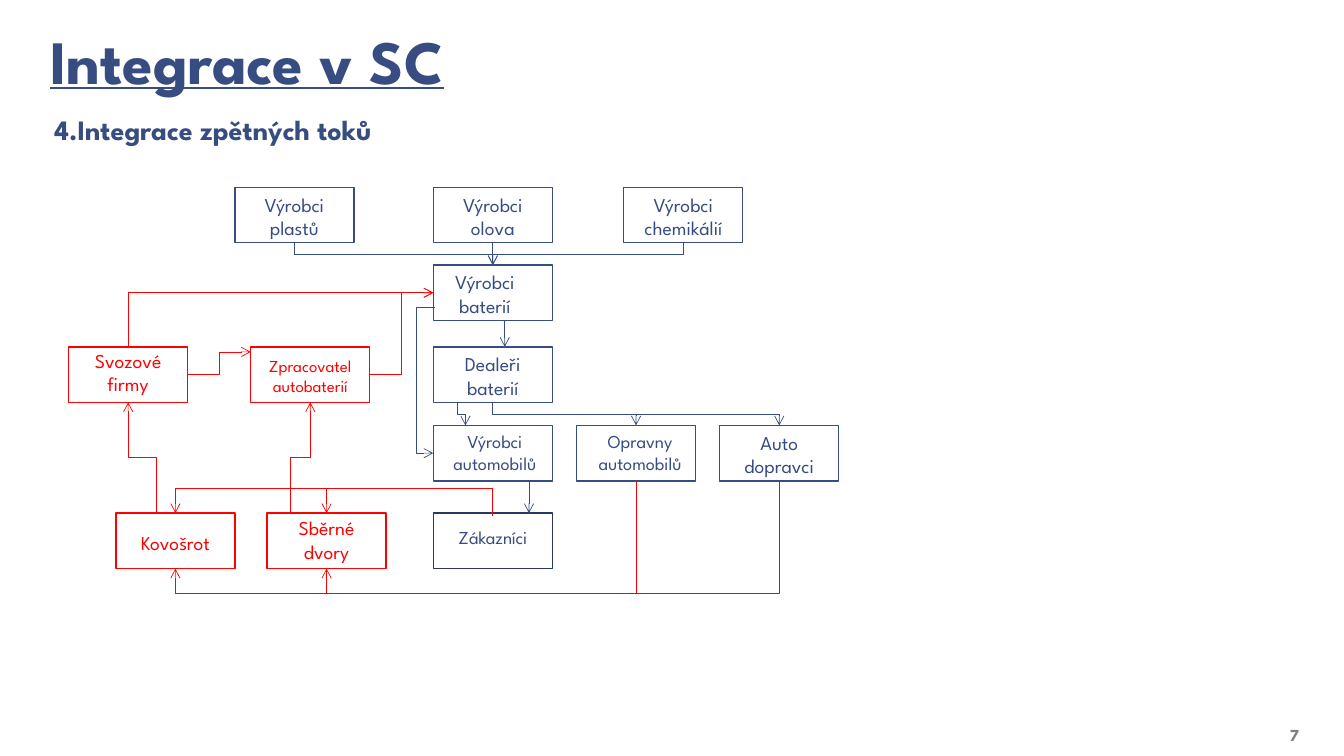
from lxml import etree
from pptx import Presentation
from pptx.dml.color import RGBColor
from pptx.enum.shapes import MSO_CONNECTOR, MSO_SHAPE
from pptx.enum.text import MSO_ANCHOR, MSO_AUTO_SIZE, PP_ALIGN
from pptx.oxml.ns import qn
from pptx.util import Cm, Pt

RECTANGLE = MSO_SHAPE.RECTANGLE
STRAIGHT, ELBOW = MSO_CONNECTOR.STRAIGHT, MSO_CONNECTOR.ELBOW
TOP, BOTTOM = MSO_ANCHOR.TOP, MSO_ANCHOR.BOTTOM
LEFT, CENTER, RIGHT = PP_ALIGN.LEFT, PP_ALIGN.CENTER, PP_ALIGN.RIGHT
NO_FIT = MSO_AUTO_SIZE.NONE

FONT = "League Spartan"
COLORS = {"navy": "374C81", "dark": "293961", "red": "FF0000", "gray": "7F7F7F"}
BOX_WIDTH, BOX_HEIGHT = 3.0, 1.4
ROWS = [0, 1.96, 4.02, 6.0, 8.21]
CORNER = "corner"

# name: text, left, row, size, line colour, text colour, text shift right, text shift down
BOXES = {
    "plastics": ("Výrobci plastů", 4.19, 0, 14, "navy", "navy", 0, 0),
    "lead": ("Výrobci olova", 9.19, 0, 14, "navy", "navy", 0, 0),
    "chemicals": ("Výrobci chemikálií", 13.99, 0, 14, "navy", "navy", 0, 0),
    "batteries": ("Výrobci baterií", 9.19, 1, 14, "navy", "navy", -0.2, 0),
    "dealers": ("Dealeři baterií", 9.19, 2, 14, "navy", "navy", 0, 0),
    "collectors": ("Svozové firmy", 0, 2, 14, "red", "red", 0, -0.08),
    "processor": ("Zpracovatel autobaterií", 4.59, 2, 12, "red", "red", 0, 0.1),
    "cars": ("Výrobci automobilů", 9.19, 3, 13, "navy", "navy", 0.05, 0),
    "repairs": ("Opravny automobilů", 12.8, 3, 13, "navy", "navy", 0.1, 0),
    "carriers": ("Auto dopravci", 16.41, 3, 14, "navy", "navy", 0, 0),
    "customers": ("Zákazníci", 9.19, 4, 13, "dark", "navy", 0, 0.2),
    "yards": ("Sběrné dvory", 5.0, 4, 14, "red", "red", 0, -0.05),
    "scrap": ("Kovošrot", 1.19, 4, 14, "red", "red", 0, 0.33),
}


def color(name):
    return RGBColor.from_string(COLORS[name])


def write(shape, text, size, ink, align, anchor=TOP, bold=None):
    frame = shape.text_frame
    frame.word_wrap = True
    frame.auto_size = NO_FIT
    frame.vertical_anchor = anchor
    frame.text = text
    para = frame.paragraphs[0]
    para.alignment = align
    para.font.name = FONT
    para.font.size = Pt(size)
    para.font.bold = bold
    para.font.color.rgb = color(ink)
    return para


def set_margins(shape, side, vertical):
    frame = shape.text_frame
    frame.margin_left = frame.margin_right = Cm(side)
    frame.margin_top = frame.margin_bottom = Cm(vertical)


def add_heading(page, left, top, width, height):
    title = page.shapes.title
    title.left, title.top, title.width, title.height = map(Cm, (left, top, width, height))
    para = write(title, "Integrace v SC", 44, "navy", LEFT, BOTTOM, True)
    para.line_spacing = 0.85
    para.font.underline = True
    set_margins(title, 0.33, 0.18)
    subtitle = page.shapes.add_textbox(Cm(left + 0.18), Cm(top + 3.99), Cm(10), Cm(1.11))
    write(subtitle, "4.Integrace zpětných toků", 20, "navy", LEFT, bold=True)


def add_page_number(page, left, top, width, height):
    number = page.shapes.add_textbox(Cm(left), Cm(top), Cm(width), Cm(height))
    write(number, "7", 12, "gray", RIGHT, BOTTOM, True)
    set_margins(number, 0.33, 0.18)


def side_point(name, side, shift=0):
    left, top = BOXES[name][1], ROWS[BOXES[name][2]]
    if side in ("top", "bottom"):
        return left + BOX_WIDTH / 2 + shift, top + BOX_HEIGHT * (side == "bottom")
    return left + BOX_WIDTH * (side == "right"), top + BOX_HEIGHT / 2 + shift


def style_line(line, ink, arrow=True):
    line.line.color.rgb = color(ink)
    line.line.width = Pt(0.5)
    if arrow:
        etree.SubElement(line.line._get_or_add_ln(), qn("a:tailEnd"), type="arrow")
    etree.SubElement(line._element.spPr, qn("a:effectLst"))


def add_route(page, origin, start, end, ink, vertical=True, bend=None):
    dx, dy = end[0] - start[0], end[1] - start[1]
    if vertical:
        middle_x, middle_y = start[0] + dx / 2, start[1] + dy / 2
        half_x = abs(dy) / 2 * (1 if dx > 0 else -1)
        half_y = abs(dx) / 2 * (1 if dy < 0 else -1)
        frame = (middle_x + half_x, middle_y + half_y, middle_x - half_x, middle_y - half_y)
    else:
        frame = (*start, *end)
    ends = [Cm(value + origin[i % 2]) for i, value in enumerate(frame)]
    route = page.shapes.add_connector(ELBOW, *ends)
    if vertical:
        route.rotation = 90 if (dx > 0) == (dy < 0) else 270
    geometry = route._element.spPr.find(qn("a:prstGeom"))
    if bend == CORNER:
        geometry.set("prst", "bentConnector2")
    elif bend is not None:
        share = (bend - start[vertical]) / (dy if vertical else dx)
        guides = geometry.find(qn("a:avLst"))
        etree.SubElement(guides, qn("a:gd"), name="adj1", fmla=f"val {round(share * 100000)}")
    style_line(route, ink)


def add_flow_box(page, origin, name):
    text, left, row, size, edge, ink, shift_x, shift_y = BOXES[name]
    box = page.shapes.add_shape(RECTANGLE, Cm(origin[0] + left), Cm(origin[1] + ROWS[row]),
                                Cm(BOX_WIDTH), Cm(BOX_HEIGHT))
    box.shadow.inherit = False
    box.fill.background()
    box.line.color.rgb = color(edge)
    box.line.width = Pt(1)
    write(box, text, size, ink, CENTER)
    frame = box.text_frame
    frame.margin_left, frame.margin_right = Cm(0.25 + shift_x), Cm(0.25 - shift_x)
    frame.margin_top, frame.margin_bottom = Cm(0.13 + shift_y), Cm(0)
    return box


def add_flow_diagram(page, left, top):
    origin = (left, top)
    shapes = {name: add_flow_box(page, origin, name) for name in BOXES}

    supply = page.shapes.add_connector(STRAIGHT, 0, 0, 0, 0)
    supply.begin_connect(shapes["lead"], 2)
    supply.end_connect(shapes["batteries"], 0)
    style_line(supply, "navy", arrow=False)
    for source, target, shift in (("batteries", "dealers", 0.3), ("cars", "customers", 0.91)):
        points = (*side_point(source, "bottom", shift), *side_point(target, "top", shift))
        ends = [Cm(value + origin[i % 2]) for i, value in enumerate(points)]
        style_line(page.shapes.add_connector(STRAIGHT, *ends), "navy")

    for source, target in (("plastics", "batteries"), ("chemicals", "batteries"),
                           ("dealers", "carriers"), ("dealers", "repairs")):
        add_route(page, origin, side_point(source, "bottom"), side_point(target, "top"), "navy")
    add_route(page, origin, side_point("dealers", "bottom", -0.89),
              side_point("cars", "top", -0.69), "navy")
    start_x, start_y = side_point("batteries", "left", 0.36)
    add_route(page, origin, (start_x + 0.05, start_y), side_point("cars", "left"), "navy",
              vertical=False, bend=start_x - 0.43)

    for source, target in (("repairs", "yards"), ("carriers", "scrap")):
        add_route(page, origin, side_point(source, "bottom"), side_point(target, "bottom"),
                  "red", bend=10.24)
    start_x, start_y = side_point("customers", "top")
    for target in ("yards", "scrap"):
        add_route(page, origin, (start_x, start_y + 0.07), side_point(target, "top"),
                  "red", bend=7.59)
    for source, target, shift in (("scrap", "collectors", -0.48), ("yards", "processor", -0.91)):
        add_route(page, origin, side_point(source, "top", shift),
                  side_point(target, "bottom"), "red")
    add_route(page, origin, side_point("collectors", "top"), side_point("batteries", "left"),
              "red", bend=CORNER)
    add_route(page, origin, side_point("collectors", "right"),
              side_point("processor", "left", -0.57), "red", vertical=False)
    add_route(page, origin, side_point("processor", "right"), side_point("batteries", "left"),
              "red", vertical=False)


def main():
    deck = Presentation()
    deck.slide_width, deck.slide_height = Cm(33.87), Cm(19.05)
    page = deck.slides.add_slide(deck.slide_layouts[5])
    add_heading(page, 0.94, -1.27, 28.22, 3.89)
    add_flow_diagram(page, 1.73, 4.72)
    add_page_number(page, 30, 18.06, 3.07, 0.89)
    deck.save("out.pptx")


if __name__ == "__main__":
    main()
